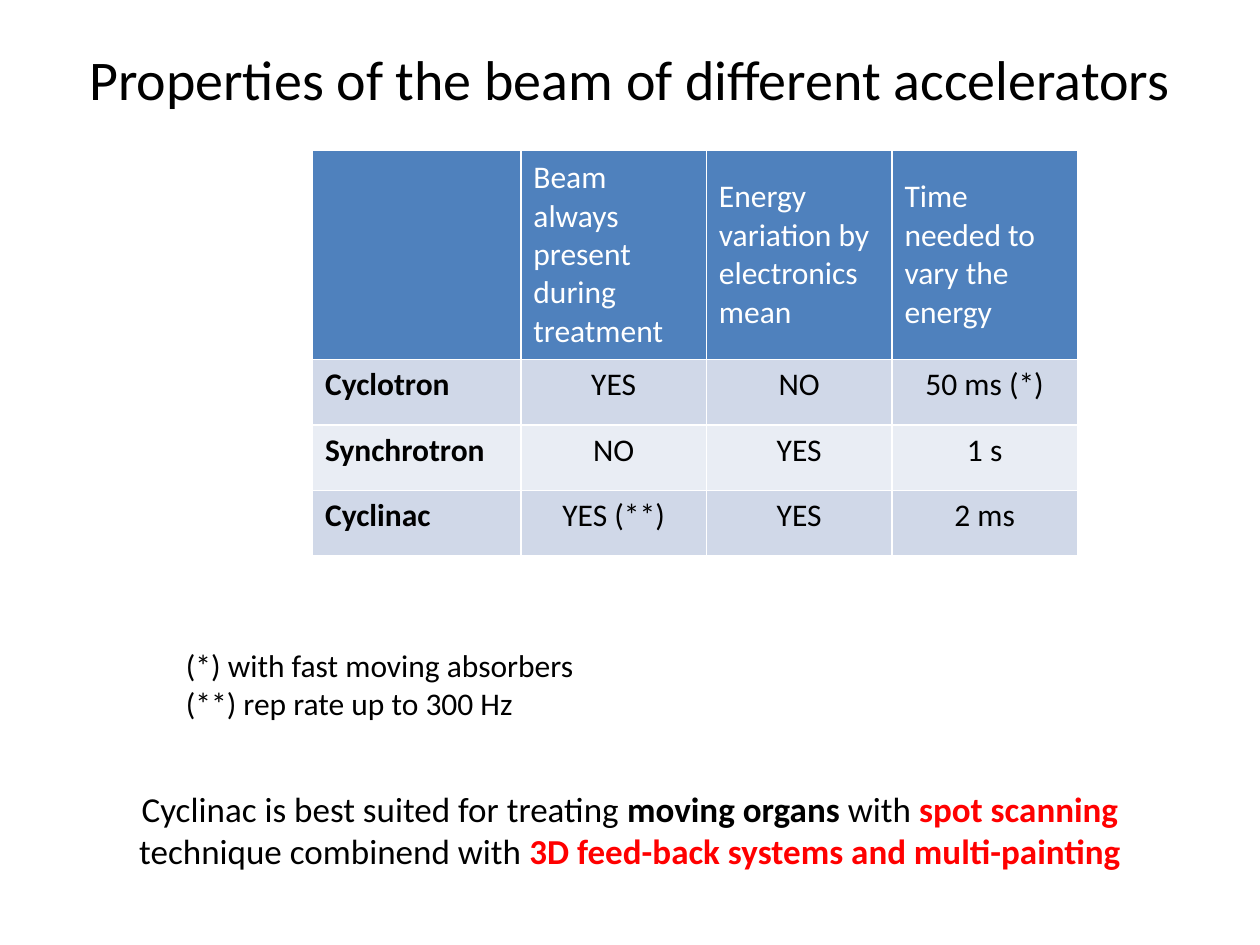
from dataclasses import dataclass

from pptx import Presentation
from pptx.dml.color import RGBColor
from pptx.enum.text import MSO_ANCHOR, PP_ALIGN
from pptx.util import Cm, Pt

LEFT, CENTER = PP_ALIGN.LEFT, PP_ALIGN.CENTER
TOP, MIDDLE = MSO_ANCHOR.TOP, MSO_ANCHOR.MIDDLE


@dataclass(frozen=True)
class Theme:
    font: str = "Calibri"
    title: Pt = Pt(32)
    conclusion: Pt = Pt(20)
    body: Pt = Pt(18)
    black: RGBColor = RGBColor(0, 0, 0)
    white: RGBColor = RGBColor(255, 255, 255)
    red: RGBColor = RGBColor(255, 0, 0)
    header: RGBColor = RGBColor(0x4F, 0x81, 0xBD)
    bands: tuple = (RGBColor(0xD0, 0xD8, 0xE8), RGBColor(0xE9, 0xED, 0xF4))


THEME = Theme()


def style(p, size, color=THEME.black, align=LEFT):
    p.alignment = align
    p.font.name = THEME.font
    p.font.size = size
    p.font.color.rgb = color


def add_text(left, top, width, height, lines, size, align=LEFT, anchor=TOP):
    """Add a text box; each line is a list of (text, bold, color) runs."""
    tf = s.shapes.add_textbox(Cm(left), Cm(top), Cm(width), Cm(height)).text_frame
    tf.word_wrap = True
    tf.vertical_anchor = anchor
    for i, runs in enumerate(lines):
        p = tf.add_paragraph() if i else tf.paragraphs[0]
        style(p, size, align=align)
        for text, bold, color in runs:
            r = p.add_run()
            r.text = text
            r.font.bold = bold
            r.font.color.rgb = color


prs = Presentation()
prs.slide_width, prs.slide_height = Cm(25.4), Cm(19.05)
s = prs.slides.add_slide(prs.slide_layouts[6])

# Title
title = "Properties of the beam of different accelerators"
add_text(1.27, 0.76, 22.86, 1.65, [[(title, False, THEME.black)]],
         THEME.title, CENTER, MIDDLE)

# Accelerator comparison; the default table style draws the white rules
ROWS = [
    ["", "Beam always present during treatment",
     "Energy variation by electronics mean", "Time needed to vary the energy"],
    ["Cyclotron", "YES", "NO", "50 ms (*)"],
    ["Synchrotron", "NO", "YES", "1 s"],
    ["Cyclinac", "YES (**)", "YES", "2 ms"],
]
COL_WIDTHS = [4.2] + [3.74] * 3
ROW_HEIGHTS = [4.23] + [1.32] * 3
table = s.shapes.add_table(len(ROWS), len(COL_WIDTHS), Cm(6.3), Cm(3.02),
                           Cm(sum(COL_WIDTHS)), Cm(sum(ROW_HEIGHTS))).table
for column, width in zip(table.columns, COL_WIDTHS):
    column.width = Cm(width)
for row, height in zip(table.rows, ROW_HEIGHTS):
    row.height = Cm(height)

for i, values in enumerate(ROWS):
    is_header = i == 0
    for j, value in enumerate(values):
        cell = table.cell(i, j)
        cell.text = value
        cell.vertical_anchor = MIDDLE if is_header else TOP
        cell.fill.solid()
        cell.fill.fore_color.rgb = THEME.header if is_header else THEME.bands[(i - 1) % 2]
        p = cell.text_frame.paragraphs[0]
        style(p, THEME.body, THEME.white if is_header else THEME.black,
              LEFT if is_header or j == 0 else CENTER)
        p.font.bold = not is_header and j == 0

# Footnotes
footnotes = ["(*) with fast moving absorbers", "(**) rep rate up to 300 Hz"]
add_text(3.5, 12.9, 15.19, 1.8, [[(note, False, THEME.black)] for note in footnotes],
         THEME.body)

# Conclusion
conclusion = [
    ("Cyclinac is best suited for treating ", False, THEME.black),
    ("moving organs ", True, THEME.black),
    ("with ", False, THEME.black),
    ("spot scanning ", True, THEME.red),
    ("technique combinend with ", False, THEME.black),
    ("3D feed-back systems and multi-painting", True, THEME.red),
]
add_text(2.3, 15.75, 20.8, 1.96, [conclusion], THEME.conclusion, CENTER)

prs.save("out.pptx")
